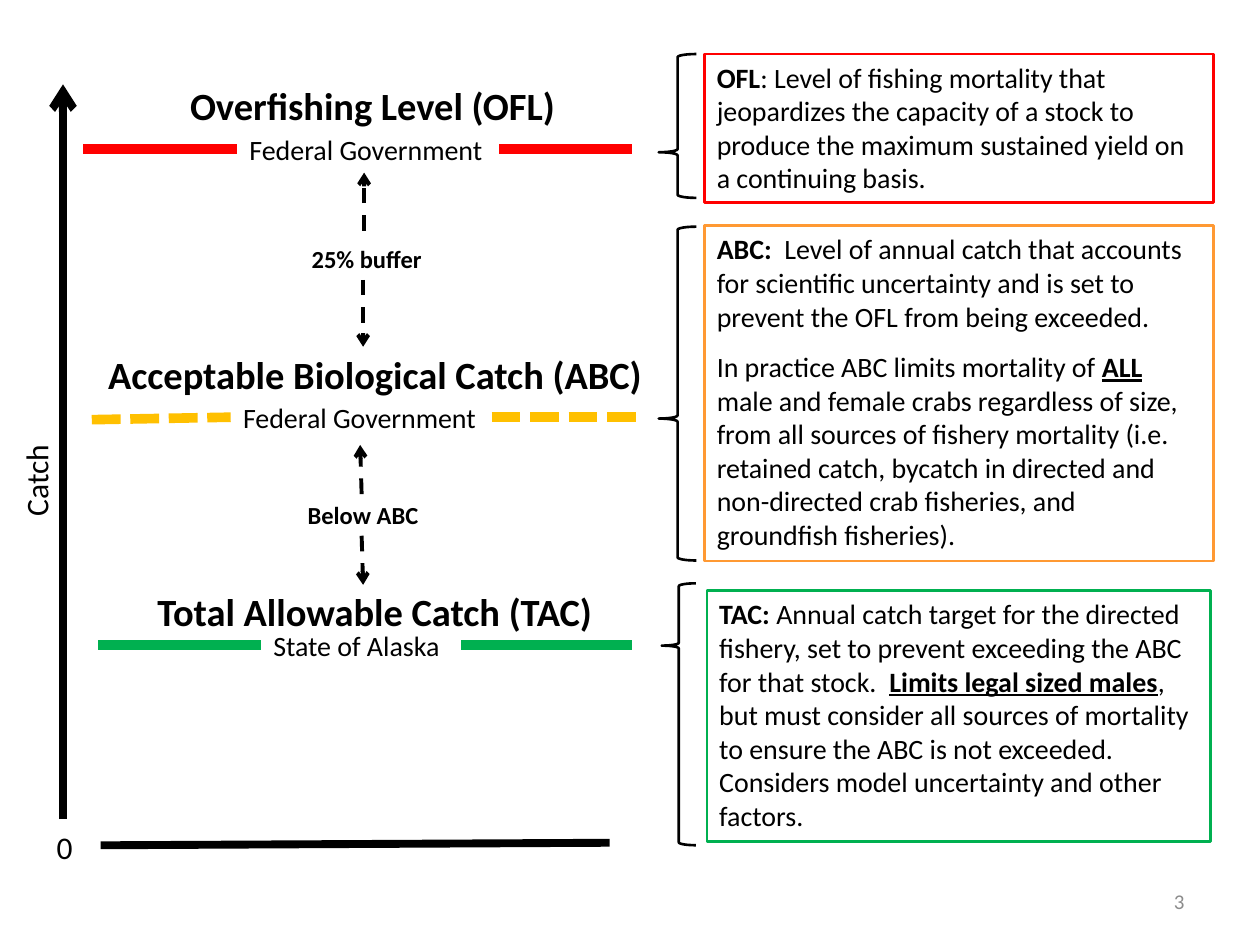
"""Build the slide that compares the OFL, ABC and TAC catch limits."""
from lxml import etree
from pptx import Presentation
from pptx import util as u
from pptx.dml.color import RGBColor
from pptx.enum import dml, shapes, text
from pptx.oxml.ns import qn

BLACK = RGBColor(0x00, 0x00, 0x00)
GREY = RGBColor(0x8C, 0x8C, 0x8C)
RED = RGBColor(0xFF, 0x00, 0x00)
ORANGE = RGBColor(0xFF, 0x99, 0x33)
AMBER = RGBColor(0xFF, 0xC0, 0x00)
GREEN = RGBColor(0x00, 0xB0, 0x50)
FONT = "Calibri"
LEFT, CENTER, RIGHT = text.PP_ALIGN.LEFT, text.PP_ALIGN.CENTER, text.PP_ALIGN.RIGHT
DASH, SHORT_DASH = dml.MSO_LINE.DASH, dml.MSO_LINE.SQUARE_DOT
SYS_DASH = "sysDash"

DEFINITIONS = [
    {"box": (14.2, 1.09, 10.26, 3), "color": RED,
     "brace": (13.28, 1.09, 0.76, 2.9), "point": 0.683,
     "paragraphs": [[
         ("OFL", "b"),
         (": Level of fishing mortality that jeopardizes the capacity of a stock to "
          "produce the maximum sustained yield on a continuing basis.", "")]]},
    {"box": (14.2, 4.55, 10.26, 6.76), "color": ORANGE,
     "brace": (13.28, 4.57, 0.76, 6.73), "point": 0.575,
     "paragraphs": [
         [("ABC: ", "b"),
          (" Level of annual catch that accounts for scientific uncertainty and is "
           "set to prevent the OFL from being exceeded.", "")],
         [("In practice ABC limits mortality of ", ""), ("ALL", "bu"),
          (" male and female crabs regardless of size, from all sources of fishery "
           "mortality (i.e. retained catch, bycatch in directed and non-directed crab "
           "fisheries, and groundfish fisheries).", "")]]},
    {"box": (14.25, 11.91, 10.16, 5.05), "color": GREEN,
     "brace": (13.34, 11.76, 0.69, 5.28), "point": 0.238,
     "paragraphs": [[
         ("TAC: ", "b"),
         ("Annual catch target for the directed fishery, set to prevent exceeding the "
          "ABC for that stock.  ", ""),
         ("Limits legal sized males", "bu"),
         (", but must consider all sources of mortality to ensure the ABC is not "
          "exceeded. Considers model uncertainty and other factors.", "")]]},
]

LEVELS = [
    {"title": "Overfishing Level (OFL)", "title_box": (3, 1.52, 9.02, 1.19),
     "owner": "Federal Government", "owner_box": (4.78, 2.54, 5.28, 0.94),
     "lines": [(1.68, 3, 4.78, 3), (10.06, 3, 12.75, 3)],
     "color": RED, "dash": None},
    {"title": "Acceptable Biological Catch (ABC)", "title_box": (1.68, 6.96, 11.76, 2.13),
     "owner": "Federal Government", "owner_box": (4.65, 7.95, 5.28, 0.94),
     "lines": [(1.85, 8.46, 4.65, 8.41), (9.91, 8.41, 12.98, 8.41)],
     "color": AMBER, "dash": SYS_DASH},
    {"title": "Total Allowable Catch (TAC)", "title_box": (2.79, 11.73, 9.53, 2.13),
     "owner": "State of Alaska", "owner_box": (5.26, 12.55, 4.39, 0.94),
     "lines": [(1.98, 13, 5.26, 13), (9.3, 13, 12.75, 13)],
     "color": GREEN, "dash": None},
]

GAPS = [
    (" 25% buffer", (5.92, 4.8, 2.87, 0.86),
     [(7.34, 4.65, 7.34, 3.48), (7.32, 5.64, 7.32, 6.99)]),
    (" Below ABC", (5.84, 9.96, 2.87, 0.86),
     [(7.29, 9.96, 7.26, 8.97), (7.29, 10.8, 7.32, 11.79)]),
]

AXES = [((2.03, 17.04, 12.29, 16.99), False), ((1.27, 16.51, 1.27, 1.7), True)]


def lengths(values):
    return [u.Cm(value) for value in values]


def write_text(shape, paragraphs, size=16, color=BLACK, align=LEFT, wrap=True,
               anchor=text.MSO_ANCHOR.TOP, gap=0):
    frame = shape.text_frame
    frame.word_wrap = wrap
    frame.vertical_anchor = anchor
    for index, runs in enumerate(paragraphs):
        paragraph = frame.add_paragraph() if index else frame.paragraphs[0]
        paragraph.alignment = align
        paragraph.space_before = u.Pt(gap if index else 0)
        for words, style in runs:
            run = paragraph.add_run()
            run.text = words
            run.font.name = FONT
            run.font.size = u.Pt(size)
            run.font.color.rgb = color
            run.font.bold = "b" in style
            run.font.underline = "u" in style


def add_label(slide, words, box, style="", **format_options):
    label = slide.shapes.add_textbox(*lengths(box))
    write_text(label, [[(words, style)]], **format_options)
    return label


def add_line(slide, ends, color, width, dash=None, arrow=False):
    line = slide.shapes.add_connector(shapes.MSO_CONNECTOR.STRAIGHT, *lengths(ends))
    line.line.color.rgb = color
    line.line.width = u.Pt(width)
    outline = line.line._get_or_add_ln()
    if dash:
        etree.SubElement(outline, qn("a:prstDash"), val=dash)
    if arrow:
        etree.SubElement(outline, qn("a:tailEnd"), type="arrow")
    etree.SubElement(line._element.spPr, qn("a:effectLst"))


def add_outline(slide, kind, box, color):
    shape = slide.shapes.add_shape(kind, *lengths(box))
    shape.shadow.inherit = False
    shape.fill.background()
    shape.line.color.rgb = color
    shape.line.width = u.Pt(1.5)
    return shape


def add_definition(slide, definition):
    box = add_outline(slide, shapes.MSO_SHAPE.RECTANGLE, definition["box"],
                      definition["color"])
    write_text(box, definition["paragraphs"], gap=9.75)
    brace = add_outline(slide, shapes.MSO_SHAPE.LEFT_BRACE, definition["brace"], BLACK)
    brace.adjustments[0] = 0.083
    brace.adjustments[1] = definition["point"]


def add_level(slide, level):
    add_label(slide, level["title"], level["title_box"], "b", size=22, align=CENTER)
    for ends in level["lines"]:
        add_line(slide, ends, level["color"], 5.5, dash=level["dash"])
    add_label(slide, level["owner"], level["owner_box"], wrap=False)


def main():
    presentation = Presentation()
    presentation.slide_width, presentation.slide_height = lengths((25.4, 19.05))
    slide = presentation.slides.add_slide(presentation.slide_layouts[6])

    for definition in DEFINITIONS:
        add_definition(slide, definition)
    for ends, arrow in AXES:
        add_line(slide, ends, BLACK, 4.5, arrow=arrow)
    axis_title = add_label(slide, "Catch", (-0.33, 9.09, 2.11, 1.02), size=18, wrap=False)
    axis_title.rotation = 270
    add_label(slide, "0", (0.89, 16.56, 1.24, 1.02), size=18)
    for level in LEVELS:
        add_level(slide, level)
    for words, box, arrows in GAPS:
        add_label(slide, words, box, "b", size=14, wrap=False)
        for ends in arrows:
            add_line(slide, ends, BLACK, 2.25, dash="dash", arrow=True)
    add_label(slide, "3", (18.21, 17.65, 5.92, 1.02), size=12, color=GREY,
              align=RIGHT, anchor=text.MSO_ANCHOR.MIDDLE)
    presentation.save("out.pptx")


if __name__ == "__main__":
    main()
